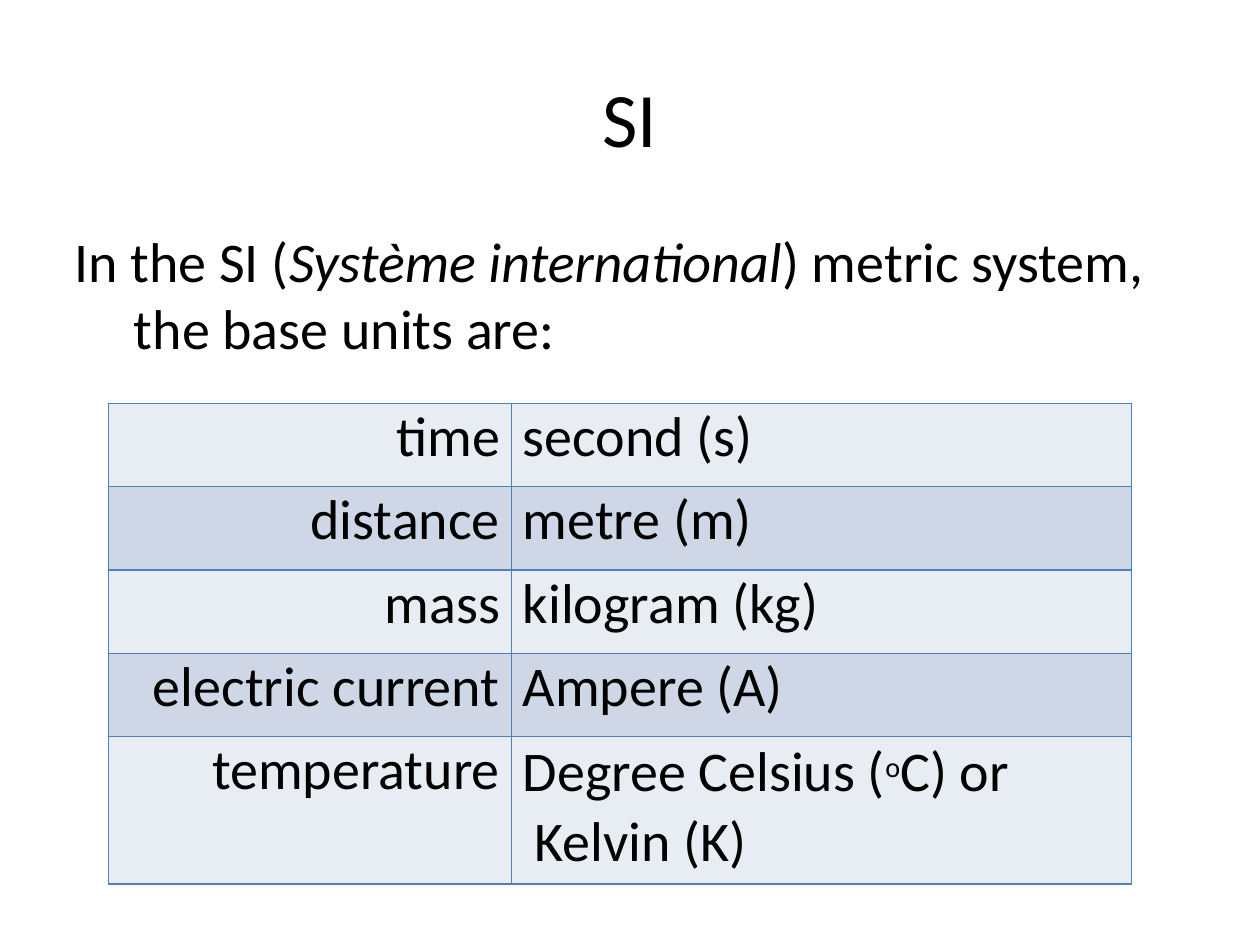
from lxml import etree
from pptx import Presentation
from pptx.dml.color import RGBColor
from pptx.enum.text import MSO_ANCHOR, MSO_AUTO_SIZE, PP_ALIGN
from pptx.oxml.ns import qn
from pptx.util import Cm, Pt

LEFT, RIGHT, CENTER = PP_ALIGN.LEFT, PP_ALIGN.RIGHT, PP_ALIGN.CENTER
TOP, MIDDLE = MSO_ANCHOR.TOP, MSO_ANCHOR.MIDDLE
NO_AUTOFIT = MSO_AUTO_SIZE.NONE

BLACK = RGBColor(0x00, 0x00, 0x00)
BORDER = RGBColor(0x4E, 0x80, 0xBC)
BANDS = [RGBColor(0xE8, 0xEC, 0xF3), RGBColor(0xCF, 0xD7, 0xE7)]

UNITS = [
    ("time", ["second (s)"]),
    ("distance", ["metre (m)"]),
    ("mass", ["kilogram (kg)"]),
    ("electric current", ["Ampere (A)"]),
    ("temperature", ["Degree Celsius (", "o", "C) or Kelvin (K)"]),
]


def write(para, texts, size, align):
    para.alignment = align
    para.font.name = "Calibri"
    para.font.size = Pt(size)
    para.font.color.rgb = BLACK
    for text in texts:
        para.add_run().text = text


def hang(para, length):
    properties = para._p.get_or_add_pPr()
    properties.set("marL", str(length))
    properties.set("indent", str(-length))
    return properties


deck = Presentation()
deck.slide_width, deck.slide_height = Cm(25.4), Cm(19.05)
page = deck.slides.add_slide(deck.slide_layouts[1])

title, body = page.placeholders
title.left, title.top, title.width, title.height = Cm(1.5), Cm(1.42), Cm(22.4), Cm(1.86)
body.left, body.top, body.width, body.height = Cm(1.5), Cm(4.57), Cm(21.72), Cm(2.72)
for box, anchor in ((title, MIDDLE), (body, TOP)):
    frame = box.text_frame
    frame.auto_size = NO_AUTOFIT
    frame.word_wrap = True
    frame.vertical_anchor = anchor
    frame.margin_left = frame.margin_right = frame.margin_top = frame.margin_bottom = 0

write(title.text_frame.paragraphs[0], ["SI"], 44, CENTER)

intro = body.text_frame.paragraphs[0]
write(intro, ["In the SI (", "Système international", ") metric system, the base units are:"], 32, LEFT)
intro.runs[1].font.italic = True
intro.space_before = Pt(0)
etree.SubElement(hang(intro, Cm(1.2)), qn("a:buNone"))

table = page.shapes.add_table(len(UNITS), 2, Cm(2.18), Cm(8.13), Cm(20.63), Cm(9.69)).table
table.first_row = False
table.horz_banding = False
table.columns[0].width, table.columns[1].width = Cm(8.13), Cm(12.5)

for index, (quantity, unit) in enumerate(UNITS):
    table.rows[index].height = Cm(2.97 if index == len(UNITS) - 1 else 1.68)
    for column, (texts, align) in enumerate((([quantity], RIGHT), (unit, LEFT))):
        cell = table.cell(index, column)
        cell.margin_left = cell.margin_right = Cm(0.23)
        cell.margin_top = cell.margin_bottom = 0
        para = cell.text_frame.paragraphs[0]
        write(para, texts, 32, align)
        para.space_before = Pt(1.8)
        for side in ("lnL", "lnR", "lnT", "lnB"):
            line = etree.SubElement(cell._tc.get_or_add_tcPr(), qn(f"a:{side}"), w=str(Pt(0.75)))
            paint = etree.SubElement(line, qn("a:solidFill"))
            etree.SubElement(paint, qn("a:srgbClr"), val=str(BORDER))
        cell.fill.solid()
        cell.fill.fore_color.rgb = BANDS[index % 2]

temperature = table.cell(len(UNITS) - 1, 1).text_frame.paragraphs[0]
temperature.line_spacing = 1.02
temperature.space_before = Pt(1.1)
hang(temperature, Cm(0.23))
degree = temperature.runs[1].font
degree.size = Pt(27.8)
degree._element.set("baseline", "29000")

deck.save("out.pptx")
